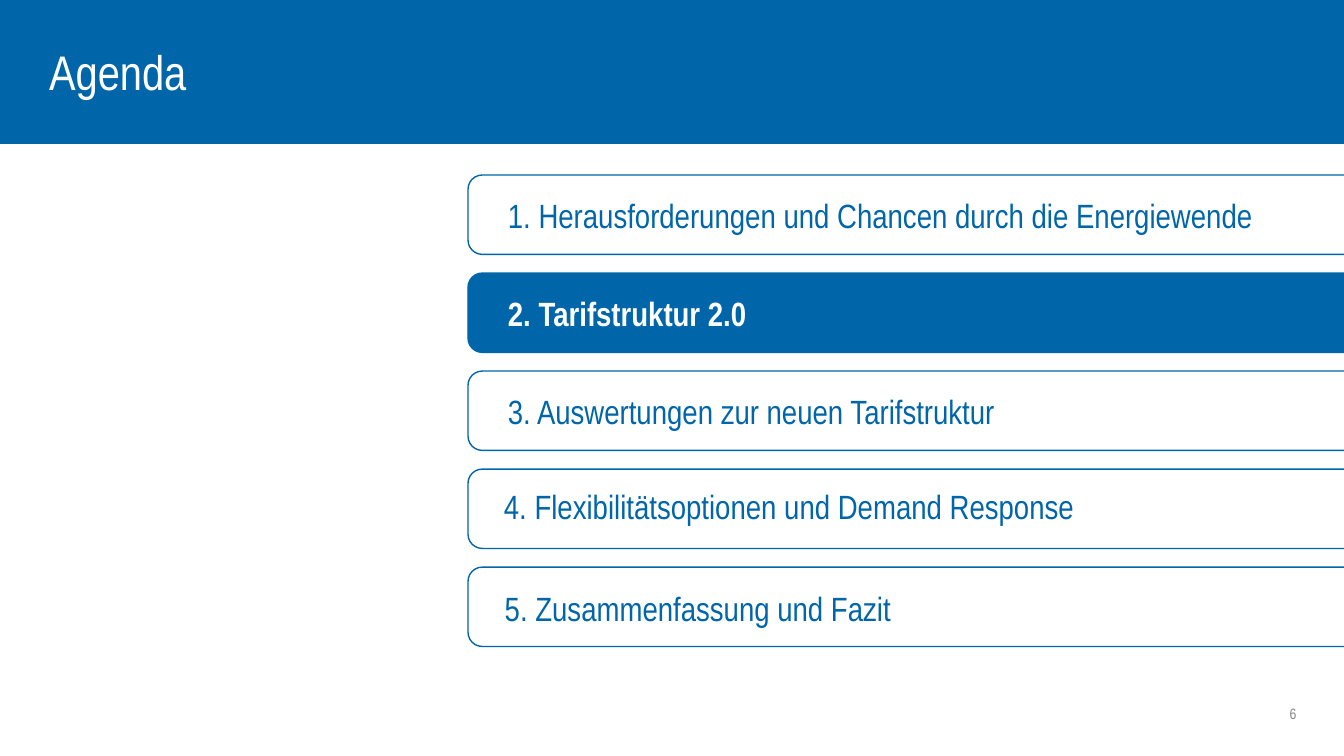
"""Builds the agenda slide with the second topic highlighted."""
from pptx import Presentation
from pptx.dml.color import RGBColor
from pptx.enum.shapes import MSO_SHAPE
from pptx.enum.text import MSO_ANCHOR, PP_ALIGN
from pptx.util import Cm, Pt

BLUE = RGBColor(0x00, 0x66, 0xA9)
WHITE = RGBColor(0xFF, 0xFF, 0xFF)
GRAY = RGBColor(0x87, 0x88, 0x8A)
FONT = "Arial Narrow"

TITLE = "Agenda"
PAGE = "6"
ACTIVE = 1
TOPICS = [
    ("1. Herausforderungen und Chancen durch die Energiewende", 12.8, 0),
    ("2. Tarifstruktur 2.0", 12.8, 0),
    ("3. Auswertungen zur neuen Tarifstruktur", 12.8, 0),
    ("4. Flexibilitätsoptionen und Demand Response", 12.7, -0.07),
    ("5. Zusammenfassung und Fazit", 12.72, 0.03),
]

SLIDE_W, SLIDE_H = 33.87, 19.05
BAR_LENGTH, BAR_HEIGHT = 22.15, 2.0
BAR_CENTER_X, FIRST_CENTER_Y, PITCH = 22.87, 5.41, 2.47
TEXT_W, TEXT_H = 19.86, 1.4


def add_text(s, text, *, left, top, width, height, size, color,
             bold=False, align=PP_ALIGN.LEFT):
    tf = s.shapes.add_textbox(Cm(left), Cm(top), Cm(width), Cm(height)).text_frame
    tf.margin_left = tf.margin_right = tf.margin_top = tf.margin_bottom = 0
    tf.word_wrap = True
    tf.vertical_anchor = MSO_ANCHOR.MIDDLE
    p = tf.paragraphs[0]
    p.alignment = align
    r = p.add_run()
    r.text = text
    r.font.name = FONT
    r.font.size = Pt(size)
    r.font.bold = bold
    r.font.color.rgb = color


def add_box(s, kind, left, top, width, height, filled):
    sp = s.shapes.add_shape(kind, Cm(left), Cm(top), Cm(width), Cm(height))
    sp.shadow.inherit = False
    sp.line.color.rgb = BLUE
    sp.line.width = Pt(1)
    if filled:
        sp.fill.solid()
        sp.fill.fore_color.rgb = BLUE
    else:
        sp.fill.background()
    return sp


def main():
    prs = Presentation()
    prs.slide_width, prs.slide_height = Cm(SLIDE_W), Cm(SLIDE_H)
    s = prs.slides.add_slide(prs.slide_layouts[6])

    add_box(s, MSO_SHAPE.RECTANGLE, 0, 0, SLIDE_W, 3.61, True)
    add_text(s, TITLE, left=1.24, top=1.12, width=24.56, height=1.32,
             size=34.7, color=WHITE)
    add_text(s, PAGE, left=28.68, top=17.65, width=3.99, height=0.66,
             size=10.7, color=GRAY, align=PP_ALIGN.RIGHT)

    for i, (topic, left, shift) in enumerate(TOPICS):
        active = i == ACTIVE
        center_y = FIRST_CENTER_Y + i * PITCH
        bar = add_box(s, MSO_SHAPE.ROUND_2_SAME_RECTANGLE,
                      BAR_CENTER_X - BAR_HEIGHT / 2, center_y - BAR_LENGTH / 2,
                      BAR_HEIGHT, BAR_LENGTH, active)
        bar.rotation = 270
        bar.adjustments[0] = 0.18
        add_text(s, topic, left=left, top=center_y + shift - TEXT_H / 2,
                 width=TEXT_W, height=TEXT_H, size=24,
                 color=WHITE if active else BLUE, bold=active)

    prs.save("out.pptx")


if __name__ == "__main__":
    main()
